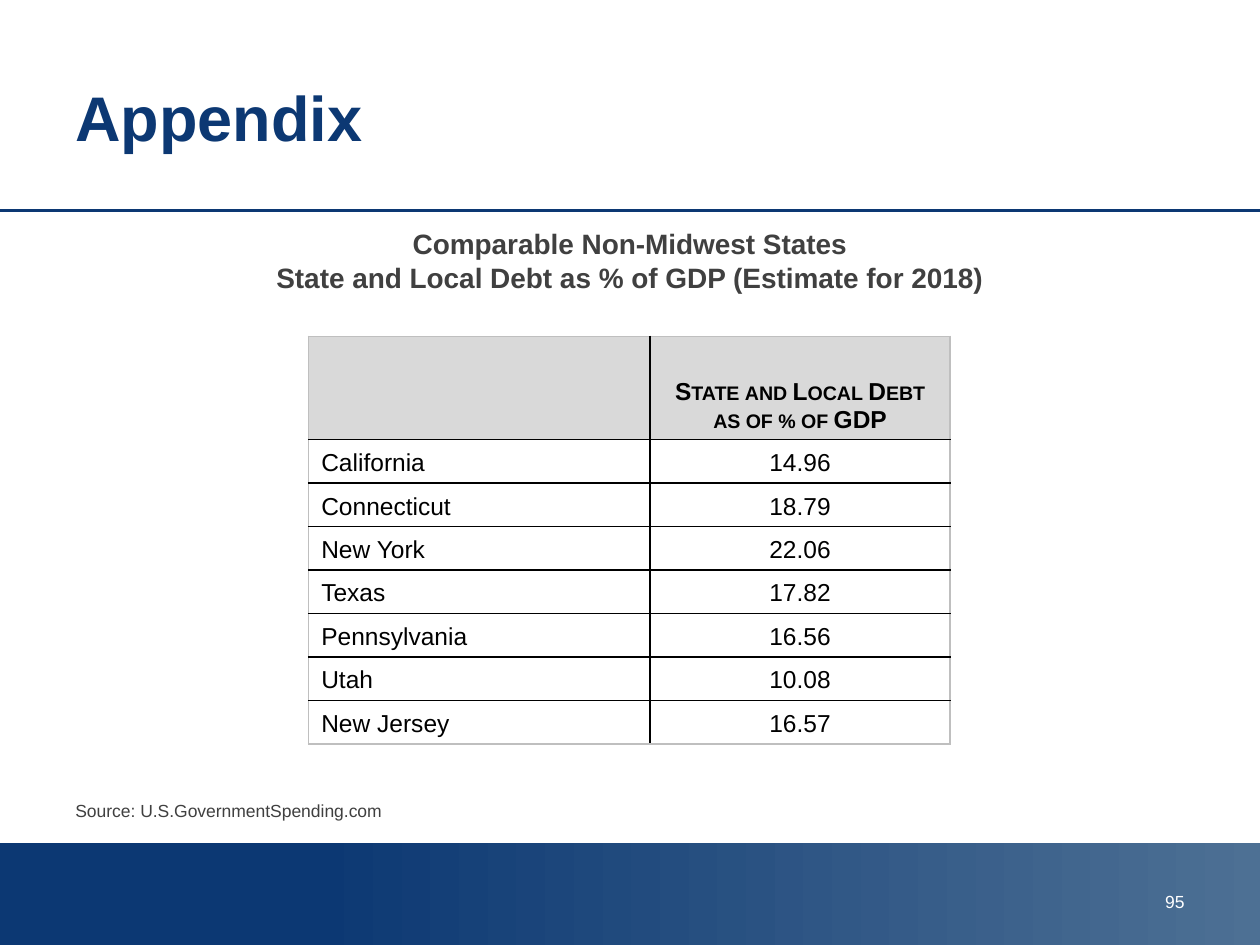
from copy import deepcopy
from dataclasses import dataclass

from lxml.etree import SubElement
from pptx import Presentation
from pptx.dml.color import RGBColor
from pptx.enum.shapes import MSO_CONNECTOR, MSO_SHAPE
from pptx.enum.text import MSO_ANCHOR, PP_ALIGN
from pptx.oxml.ns import qn
from pptx.util import Inches, Pt

NAVY = RGBColor(0x0C, 0x38, 0x73)
STEEL = RGBColor(0x4D, 0x70, 0x94)
WHITE = RGBColor(0xFF, 0xFF, 0xFF)
BLACK = RGBColor(0, 0, 0)
CHARCOAL = RGBColor(0x40, 0x40, 0x40)
HEADER_GRAY = RGBColor(0xD9, 0xD9, 0xD9)
EDGE_GRAY = RGBColor(0xBF, 0xBF, 0xBF)


@dataclass(frozen=True)
class StateDebt:
    state: str
    percent: str


DEBTS = [
    StateDebt("California", "14.96"),
    StateDebt("Connecticut", "18.79"),
    StateDebt("New York", "22.06"),
    StateDebt("Texas", "17.82"),
    StateDebt("Pennsylvania", "16.56"),
    StateDebt("Utah", "10.08"),
    StateDebt("New Jersey", "16.57"),
]


def write_text(frame, text: str, *, size: float, color: RGBColor, bold=False,
               align=PP_ALIGN.LEFT, line_spacing=None, small_caps=False) -> None:
    para = frame.paragraphs[0]
    para.text = text.replace("\n", "\v")
    para.alignment = align
    para.line_spacing = line_spacing
    for span in para.runs:
        span.font.name = "Arial"
        span.font.size = Pt(size)
        span.font.bold = bold
        span.font.color.rgb = color
        if small_caps:
            span.font._element.set("cap", "small")
    for line_break in para._p.findall(qn("a:br")):
        line_break.append(deepcopy(para.runs[0].font._element))


def add_text(page, text: str, left: float, top: float, width: float, height: float,
             *, anchor=MSO_ANCHOR.TOP, **text_format) -> None:
    box = page.shapes.add_textbox(Inches(left), Inches(top), Inches(width), Inches(height))
    box.text_frame.word_wrap = True
    box.text_frame.vertical_anchor = anchor
    write_text(box.text_frame, text, **text_format)


def add_border(cell, side: str, color: RGBColor) -> None:
    border = SubElement(cell._tc.get_or_add_tcPr(), qn(f"a:{side}"), w=str(Pt(1)))
    fill = SubElement(border, qn("a:solidFill"))
    SubElement(fill, qn("a:srgbClr"), val=str(color))


def add_debt_table(page) -> None:
    rows = [("", "State and Local Debt\nas of % of GDP")]
    rows += [(debt.state, debt.percent) for debt in DEBTS]
    table = page.shapes.add_table(
        len(rows), 2, Inches(2.45), Inches(2.67), Inches(5.09), Inches(3.24)).table
    table.horz_banding = False
    for column, width in zip(table.columns, (2.71, 2.38)):
        column.width = Inches(width)
    last_row = len(rows) - 1
    for row_index, texts in enumerate(rows):
        is_header = row_index == 0
        table.rows[row_index].height = Inches(0.82 if is_header else 0.345)
        for column_index, text in enumerate(texts):
            cell = table.cell(row_index, column_index)
            cell.vertical_anchor = MSO_ANCHOR.BOTTOM
            write_text(cell.text_frame, text, size=14, color=BLACK, bold=is_header,
                       align=PP_ALIGN.CENTER if column_index else PP_ALIGN.LEFT,
                       line_spacing=Pt(16), small_caps=is_header)
            outer_sides = {"lnL": column_index == 0, "lnR": column_index == 1,
                           "lnT": is_header, "lnB": row_index == last_row}
            for side, is_outer in outer_sides.items():
                add_border(cell, side, EDGE_GRAY if is_outer else BLACK)
            if is_header:
                cell.fill.solid()
                cell.fill.fore_color.rgb = HEADER_GRAY
            else:
                cell.fill.background()


def add_footer_band(page) -> None:
    band = page.shapes.add_shape(
        MSO_SHAPE.RECTANGLE, Inches(0), Inches(6.69), Inches(10.02), Inches(0.81))
    band.shadow.inherit = False
    band.line.fill.background()
    band.fill.gradient()
    band.fill.gradient_angle = 0
    for stop, position, color in zip(band.fill.gradient_stops, (0.25, 1), (NAVY, STEEL)):
        stop.position = position
        stop.color.rgb = color


def add_title_rule(page) -> None:
    rule = page.shapes.add_connector(
        MSO_CONNECTOR.STRAIGHT, Inches(0), Inches(1.67), Inches(10), Inches(1.67))
    rule.line.color.rgb = NAVY
    rule.line.width = Pt(2)
    SubElement(rule._element.spPr, qn("a:effectLst"))


def main() -> None:
    """Build the appendix slide on state and local debt."""
    deck = Presentation()
    deck.slide_width, deck.slide_height = Inches(10), Inches(7.5)
    page = deck.slides.add_slide(deck.slide_layouts[6])
    add_footer_band(page)
    add_title_rule(page)
    add_text(page, "Appendix", 0.5, 0.3, 9, 1.25, anchor=MSO_ANCHOR.MIDDLE,
             size=36, color=NAVY, bold=True)
    add_text(page, "95", 7.17, 7.02, 2.33, 0.4, size=10, color=WHITE, align=PP_ALIGN.RIGHT)
    add_text(page, "Comparable Non-Midwest States\n"
             "State and Local Debt as % of GDP (Estimate for 2018)",
             0.5, 1.75, 9, 0.7, size=16, color=CHARCOAL, bold=True, align=PP_ALIGN.CENTER)
    add_text(page, "Source: U.S.GovernmentSpending.com", 0.5, 6.3, 9, 0.3,
             size=10, color=CHARCOAL)
    add_debt_table(page)
    deck.save("out.pptx")


if __name__ == "__main__":
    main()
